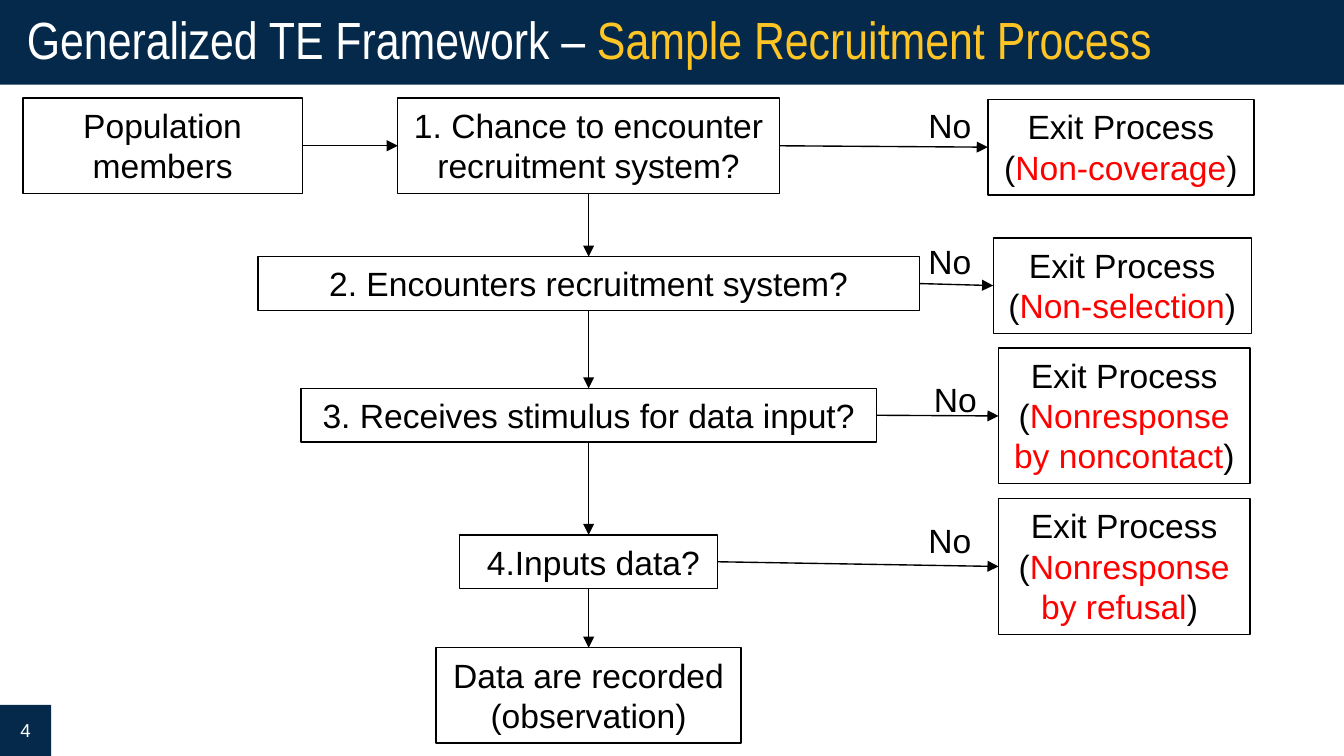
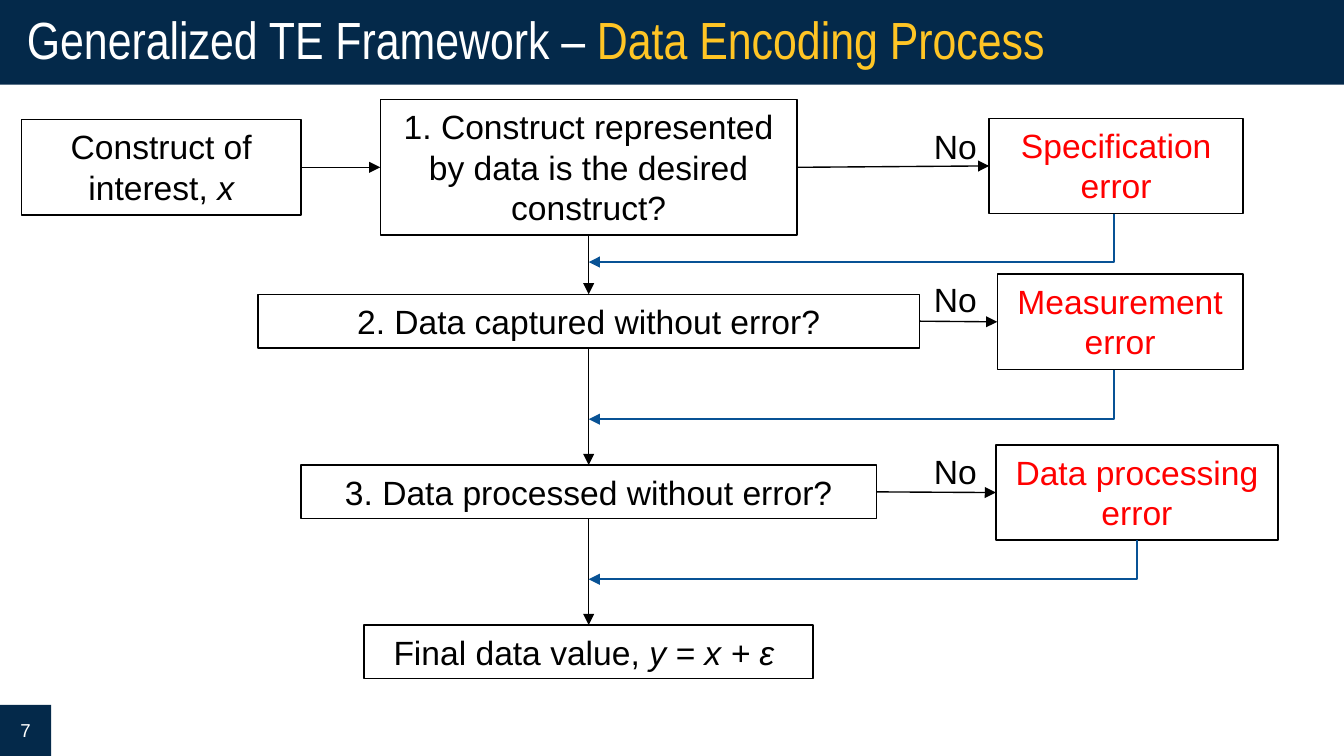
from lxml.etree import SubElement
from pptx import Presentation
from pptx.dml.color import RGBColor
from pptx.enum.shapes import MSO_CONNECTOR, MSO_SHAPE
from pptx.enum.text import MSO_ANCHOR, MSO_AUTO_SIZE, PP_ALIGN
from pptx.oxml.ns import qn
from pptx.util import Inches, Pt

COLORS = {"navy": "04294A", "gold": "FFC525", "blue": "085295",
          "red": "FF0000", "black": "000000", "white": "FFFFFF"}
W = 10
H = W * 9 / 16
BAND, PAGE, AXIS = 0.63, 0.38, 4.38
HEIGHTS = {1: 0.40, 2: 0.71, 3: 1.01}  # box height by number of text lines
TOP, LEFT, BOTTOM, RIGHT = range(4)

PLAIN = {"size": 18, "name": "Arial", "color": "black"}
RED = {**PLAIN, "color": "red"}
ITALIC = {**PLAIN, "italic": True}
HEAD = {"size": 28, "name": "Arial Narrow", "color": "white"}
GOLD = {**HEAD, "color": "gold"}
NUMBER = {"size": 10, "name": "Arial", "color": "white"}


def plain(*lines):
    return [[(line, PLAIN)] for line in lines]


def red(text):
    return [[(text, RED)]]


def exit_process(reason, close=")"):
    return [[("Exit Process", PLAIN)],
            [("(", PLAIN), (reason, RED), (close, PLAIN)]]


# start and exits: left, top, width, lines, paragraphs
# steps: top, width, lines, paragraphs, all centred on AXIS
# no: left, top of each label; returns: x, y of the corner below each exit
SLIDES = [
    {
        "title": "Sample Recruitment Process",
        "page": "4",
        "start": (0.17, 0.73, 2.08, 2, plain("Population members")),
        "steps": [
            (0.73, 2.84, 2, plain("1. Chance to encounter recruitment system?")),
            (1.91, 4.92, 1, plain("2. Encounters recruitment system?")),
            (2.89, 4.28, 1, plain("3. Receives stimulus for data input?")),
            (3.98, 1.92, 1, plain(" 4.Inputs data?")),
            (4.82, 2.27, 2, plain("Data are recorded", "(observation)")),
        ],
        "exits": [
            (7.35, 0.74, 1.98, 2, exit_process("Non-coverage")),
            (7.39, 1.77, 1.92, 2, exit_process("Non-selection")),
            (7.43, 2.59, 1.87, 3, exit_process("Nonresponse by noncontact", ") ")),
            (7.43, 3.71, 1.87, 3, exit_process("Nonresponse by refusal", ") ")),
        ],
        "no": [(6.81, 0.73), (6.81, 1.74), (6.85, 2.77), (6.81, 3.82)],
        "returns": [],
    },
    {
        "title": "Data Encoding Process",
        "page": "7",
        "start": (0.16, 0.89, 2.08, 2,
                  [[("Construct of interest, ", PLAIN), ("x", ITALIC)]]),
        "steps": [
            (0.74, 3.10, 3,
             plain("1. Construct represented by data is the desired construct?")),
            (2.19, 4.92, 1, plain("2. Data captured without error?")),
            (3.46, 4.28, 1, plain("3. Data processed without error?")),
            (4.65, 3.34, 1,
             [[("Final data value, ", PLAIN), ("y = x + ε ", ITALIC)]]),
        ],
        "exits": [
            (7.36, 0.88, 1.89, 2, red("Specification error")),
            (7.42, 2.04, 1.83, 2, red("Measurement error")),
            (7.41, 3.31, 2.10, 2, red("Data processing error")),
        ],
        "no": [(6.85, 0.89), (6.85, 2.03), (6.85, 3.31)],
        "returns": [(8.29, 1.95), (8.29, 3.12), (8.46, 4.31)],
    },
]


def rgb(name):
    return RGBColor.from_string(COLORS[name])


def write(sp, paragraphs, align=PP_ALIGN.CENTER, anchor=MSO_ANCHOR.TOP, spacing=None):
    tf = sp.text_frame
    tf.word_wrap = True
    tf.vertical_anchor = anchor
    for i, runs in enumerate(paragraphs):
        p = tf.add_paragraph() if i else tf.paragraphs[0]
        p.alignment = align
        p.line_spacing = spacing
        for text, style in runs:
            r = p.add_run()
            r.text = text
            for key, value in style.items():
                if key == "color":
                    r.font.color.rgb = rgb(value)
                else:
                    setattr(r.font, key, Pt(value) if key == "size" else value)
    return tf


def add_rect(s, left, top, width, height, fill=None, line=None):
    sp = s.shapes.add_shape(MSO_SHAPE.RECTANGLE,
                            *map(Inches, (left, top, width, height)))
    sp.shadow.inherit = False
    if fill:
        sp.fill.solid()
        sp.fill.fore_color.rgb = rgb(fill)
    else:
        sp.fill.background()
    if line:
        sp.line.color.rgb = rgb(line)
        sp.line.width = Pt(0.75)
    else:
        sp.line.fill.background()
    return sp


def add_box(s, left, top, width, lines, paragraphs, fill=None):
    sp = add_rect(s, left, top, width, HEIGHTS[lines], fill, "black")
    write(sp, paragraphs).auto_size = MSO_AUTO_SIZE.SHAPE_TO_FIT_TEXT
    return sp


def add_arrow(s, kind, color, width):
    c = s.shapes.add_connector(kind, 0, 0, 0, 0)
    c.line.color.rgb = rgb(color)
    c.line.width = Pt(width)
    SubElement(c.line._get_or_add_ln(), qn("a:tailEnd"), type="triangle")
    SubElement(c._element.spPr, qn("a:effectLst"))
    return c


def join(s, a, a_side, b, b_side):
    c = add_arrow(s, MSO_CONNECTOR.STRAIGHT, "black", 0.75)
    c.begin_connect(a, a_side)
    c.end_connect(b, b_side)


def add_return(s, x, start_y, end_y):
    """Arrow down from (x, start_y), then left to the axis at end_y."""
    c = add_arrow(s, MSO_CONNECTOR.ELBOW, "blue", 1)
    drop, run = end_y - start_y, x - AXIS
    # A quarter turn swaps width and height around the centre.
    c.left, c.top = Inches((x + AXIS - drop) / 2), Inches((start_y + end_y - run) / 2)
    c.width, c.height = Inches(drop), Inches(run)
    spPr = c._element.spPr
    spPr.find(qn("a:xfrm")).set("rot", "5400000")
    spPr.find(qn("a:prstGeom")).set("prst", "bentConnector2")


def add_frame(s, title, page):
    sp = add_rect(s, 0, 0, W, BAND, "navy")
    tf = write(sp, [[("Generalized TE Framework – ", HEAD), (title, GOLD)]],
               PP_ALIGN.LEFT, MSO_ANCHOR.MIDDLE, 0.9)
    margins = {"left": 0.2, "right": 0.2, "top": 0.1, "bottom": 0.1}
    for side, value in margins.items():
        setattr(tf, f"margin_{side}", Inches(value))
    sp = add_rect(s, 0, H - PAGE, PAGE, PAGE, "navy")
    write(sp, [[(page, NUMBER)]], anchor=MSO_ANCHOR.MIDDLE)


def build_slide(prs, data):
    s = prs.slides.add_slide(prs.slide_layouts[6])
    add_frame(s, data["title"], data["page"])
    start = add_box(s, *data["start"])
    steps = [add_box(s, AXIS - width / 2, top, width, lines, text, "white")
             for top, width, lines, text in data["steps"]]
    exits = [add_box(s, *item) for item in data["exits"]]

    join(s, start, RIGHT, steps[0], LEFT)
    for a, b in zip(steps, steps[1:]):
        join(s, a, BOTTOM, b, TOP)
    for a, b in zip(steps, exits):
        join(s, a, RIGHT, b, LEFT)
    for (x, y), (_, top, _, lines, _) in zip(data["returns"], data["exits"]):
        add_return(s, x, top + HEIGHTS[lines], y)
    for left, top in data["no"]:
        sp = s.shapes.add_textbox(*map(Inches, (left, top, 0.67, HEIGHTS[1])))
        write(sp, plain("No"), PP_ALIGN.LEFT)


def main():
    prs = Presentation()
    prs.slide_width, prs.slide_height = Inches(W), Inches(H)
    for data in SLIDES:
        build_slide(prs, data)
    prs.save("out.pptx")


if __name__ == "__main__":
    main()
